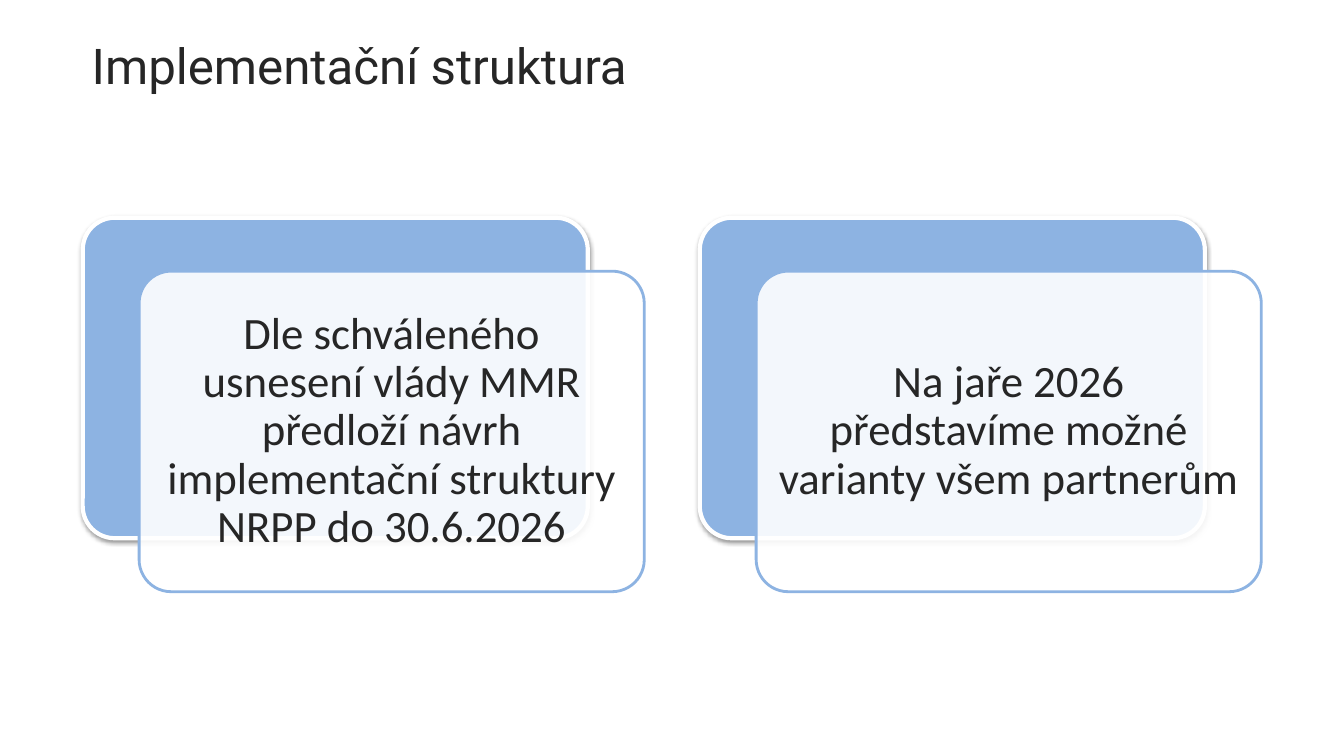
"""Build the slide on the implementation structure with two layered cards."""
from dataclasses import dataclass

from lxml import etree
from pptx import Presentation
from pptx.dml import color as c
from pptx.enum import shapes as sh, text as tx
from pptx.oxml import ns, parse_xml
from pptx.util import Inches, Pt


@dataclass(frozen=True)
class Theme:
    """Colours, fonts and type sizes."""
    ink: str = "262626"
    blue: str = "8DB3E2"
    white: str = "FFFFFF"
    title_font: str = "Roboto"
    body_font: str = "Calibri"
    title_size: float = 35.2
    body_size: float = 32


THEME = Theme()
CARD_W, CARD_H = 5.01, 3.18
CARD_LEFT, CARD_TOP, CARD_STEP = 0.82, 2.16, 6.12
SHIFT_X, SHIFT_Y = 0.56, 0.53
TEXT_GAP = 0.095
CARDS = (
    "Dle schváleného usnesení vlády MMR předloží návrh implementační struktury NRPP do 30.6.2026",
    "Na jaře 2026 představíme možné varianty všem partnerům",
)
SHADOW = (
    f'<a:effectLst {ns.nsdecls("a")}><a:outerShdw blurRad="{Pt(3.1)}" dist="{Pt(1.6)}" '
    'dir="5400000" rotWithShape="0"><a:srgbClr val="000000"><a:alpha val="38000"/>'
    '</a:srgbClr></a:outerShdw></a:effectLst>'
)


def apply(obj, formats):
    """Set each attribute named in formats on obj."""
    for name, value in formats.items():
        setattr(obj, name, value)


def write(tf, words, font, size, margins, frame, para):
    """Put one formatted paragraph in a text frame."""
    x, y = (Inches(m) for m in margins)
    apply(tf, dict(word_wrap=True, auto_size=tx.MSO_AUTO_SIZE.NONE, margin_left=x,
                   margin_right=x, margin_top=y, margin_bottom=y, **frame))
    p = tf.paragraphs[0]
    apply(p, para)
    r = p.add_run()
    r.text = words
    apply(r.font, dict(name=font, size=Pt(size), bold=False))
    r.font.color.rgb = c.RGBColor.from_string(THEME.ink)


def add_title(s, words):
    """Place and fill the title placeholder."""
    title = s.shapes.title
    apply(title, dict(left=Inches(0.81), top=Inches(0.3),
                      width=Inches(11.72), height=Inches(0.99)))
    write(title.text_frame, words, THEME.title_font, THEME.title_size, (0.1, 0.05),
          dict(vertical_anchor=tx.MSO_ANCHOR.TOP), dict(alignment=tx.PP_ALIGN.LEFT))


def add_panel(s, left, top, fill, line, width):
    """Add one rounded panel without a shadow."""
    sp = s.shapes.add_shape(sh.MSO_SHAPE.ROUNDED_RECTANGLE, Inches(left), Inches(top),
                            Inches(CARD_W), Inches(CARD_H))
    sp.adjustments[0] = 0.1
    sp.shadow.inherit = False
    sp.fill.solid()
    sp.fill.fore_color.rgb = c.RGBColor.from_string(fill)
    sp.line.color.rgb = c.RGBColor.from_string(line)
    sp.line.width = Pt(width)
    return sp


def add_card(s, left, words):
    """Add a shadowed back panel, a translucent front panel and its text."""
    back = add_panel(s, left, CARD_TOP, THEME.blue, THEME.white, 3)
    props = back.element.spPr
    props.replace(props.find(ns.qn("a:effectLst")), parse_xml(SHADOW))

    x, y = left + SHIFT_X, CARD_TOP + SHIFT_Y
    front = add_panel(s, x, y, THEME.white, THEME.blue, 2)
    colour = front.element.spPr.find(f'{ns.qn("a:solidFill")}/{ns.qn("a:srgbClr")}')
    etree.SubElement(colour, ns.qn("a:alpha"), val="90000")

    box = s.shapes.add_textbox(Inches(x + TEXT_GAP), Inches(y + TEXT_GAP),
                               Inches(CARD_W - 2 * TEXT_GAP), Inches(CARD_H - 2 * TEXT_GAP))
    write(box.text_frame, words, THEME.body_font, THEME.body_size, (0.13, 0.13),
          dict(vertical_anchor=tx.MSO_ANCHOR.MIDDLE),
          dict(alignment=tx.PP_ALIGN.CENTER, line_spacing=0.9))


def main():
    """Build and save the presentation."""
    prs = Presentation()
    apply(prs, dict(slide_width=Inches(13.33), slide_height=Inches(7.5)))
    s = prs.slides.add_slide(prs.slide_layouts.get_by_name("Title Only"))
    add_title(s, "Implementační struktura")
    for i, words in enumerate(CARDS):
        add_card(s, CARD_LEFT + i * CARD_STEP, words)
    prs.save("out.pptx")


if __name__ == "__main__":
    main()
